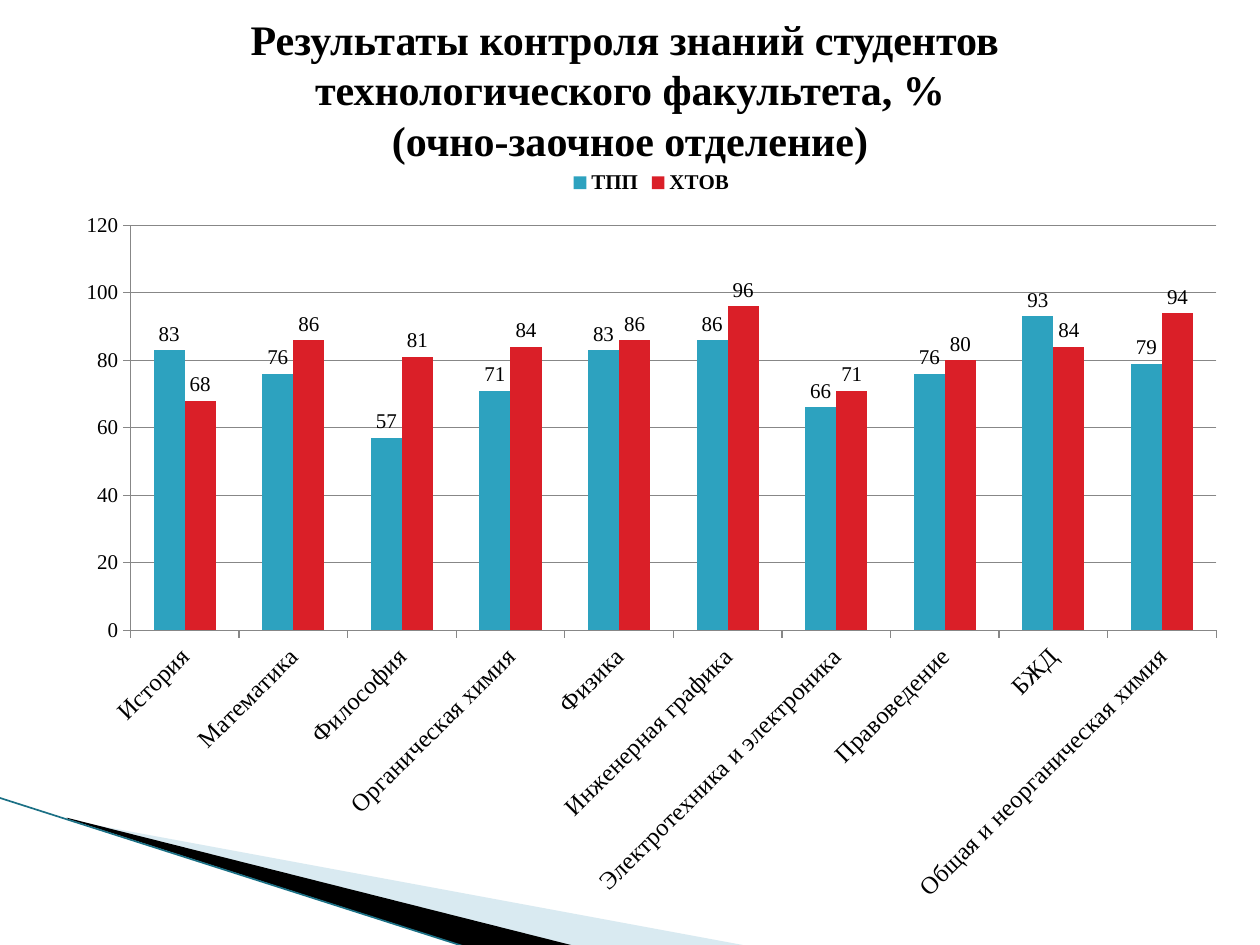
from lxml import etree
from pptx import Presentation
from pptx import util as u
from pptx.chart.data import CategoryChartData
from pptx.dml.color import RGBColor
from pptx.enum import chart as ch, shapes, text
from pptx.oxml.ns import qn

COLORS = {"black": "000000", "pale": "A0CBDC", "edge": "1B7085", "grid": "878787",
          "ТПП": "2DA2BF", "ХТОВ": "DA1F28"}
FONT = "Times New Roman"


def color(name):
    return RGBColor.from_string(COLORS[name])


def write(frame, words, size, bold=False, align=text.PP_ALIGN.CENTER):
    frame.text = words
    paragraph = frame.paragraphs[0]
    paragraph.alignment = align
    for run in paragraph.runs:
        run.font.name, run.font.size, run.font.bold = FONT, u.Pt(size), bold
        run.font.color.rgb = color("black")


prs = Presentation()
prs.slide_width, prs.slide_height = u.Inches(10), u.Inches(7.5)
slide = prs.slides.add_slide(prs.slide_layouts[5])

# Corner wedges
wedges = [
    ("pale", 40, [(0.55, 6.51), (5.95, 7.51), (4.56, 7.51), (0.55, 6.5)]),
    ("black", 100, [(0.53, 6.49), (4.57, 7.51), (3.72, 7.52), (0.54, 6.5)]),
]
for name, opacity, points in wedges:
    corners = [(u.Inches(x), u.Inches(y)) for x, y in points]
    outline = slide.shapes.build_freeform(*corners[0])
    outline.add_line_segments(corners[1:])
    wedge = outline.convert_to_shape()
    wedge.shadow.inherit = False
    wedge.line.fill.background()
    wedge.fill.solid()
    wedge.fill.fore_color.rgb = color(name)
    if opacity < 100:
        fill_color = wedge.fill._xPr.find(".//" + qn("a:srgbClr"))
        etree.SubElement(fill_color, qn("a:alpha"), val=str(opacity * 1000))

# Corner edge line
edge = slide.shapes.add_connector(shapes.MSO_CONNECTOR.STRAIGHT, u.Inches(-0.01),
                                  u.Inches(6.33), u.Inches(3.71), u.Inches(7.52))
edge.line.color.rgb = color("edge")
edge.line.width = u.Pt(0.95)
etree.SubElement(edge._element.spPr, qn("a:effectLst"))

# Title
title = slide.shapes.title
title.left, title.top = u.Inches(0.5), u.Inches(0.16)
title.width, title.height = u.Inches(9), u.Inches(1.09)
title.text_frame.vertical_anchor = text.MSO_ANCHOR.MIDDLE
title.text_frame.auto_size = text.MSO_AUTO_SIZE.NONE
write(title.text_frame, "Результаты контроля знаний студентов \vтехнологического факультета, %"
      "\v(очно-заочное отделение)", size=24, bold=True)

# Results by subject
results = CategoryChartData()
results.categories = ["История", "Математика", "Философия", "Органическая химия", "Физика",
                      "Инженерная графика", "Электротехника и электроника", "Правоведение",
                      "БЖД", "Общая и неорганическая химия"]
results.add_series("ТПП", [83, 76, 57, 71, 83, 86, 66, 76, 93, 79])
results.add_series("ХТОВ", [68, 86, 81, 84, 86, 96, 71, 80, 84, 94])
chart = slide.shapes.add_chart(ch.XL_CHART_TYPE.COLUMN_CLUSTERED, u.Inches(0.5), u.Inches(1.25),
                               u.Inches(9.34), u.Inches(6.02), results).chart
chart.has_title = False
chart.font.name, chart.font.size = FONT, u.Pt(12)
chart.font.color.rgb = color("black")

# Columns and value labels
plot = chart.plots[0]
plot.gap_width, plot.overlap = 150, 0
plot.vary_by_categories = False
for series in plot.series:
    series.format.fill.solid()
    series.format.fill.fore_color.rgb = color(series.name)
    series.data_labels.show_value = True
    series.data_labels.position = ch.XL_LABEL_POSITION.OUTSIDE_END

# Axes
subjects, percents = chart.category_axis, chart.value_axis
percents.minimum_scale, percents.maximum_scale, percents.major_unit = 0, 120, 20
percents.has_major_gridlines = True
for line in (subjects.format.line, percents.format.line, percents.major_gridlines.format.line):
    line.color.rgb = color("grid")
    line.width = u.Pt(0.75)
for axis in (subjects, percents):
    axis.major_tick_mark = ch.XL_TICK_MARK.OUTSIDE
subjects.tick_labels.font.size = u.Pt(14)
subjects._element.find(qn("c:txPr")).find(qn("a:bodyPr")).set("rot", "-2700000")

# Legend
chart.has_legend = True
chart.legend.position = ch.XL_LEGEND_POSITION.TOP
chart.legend.include_in_layout = False
chart.legend.font.bold = True

prs.save("out.pptx")
